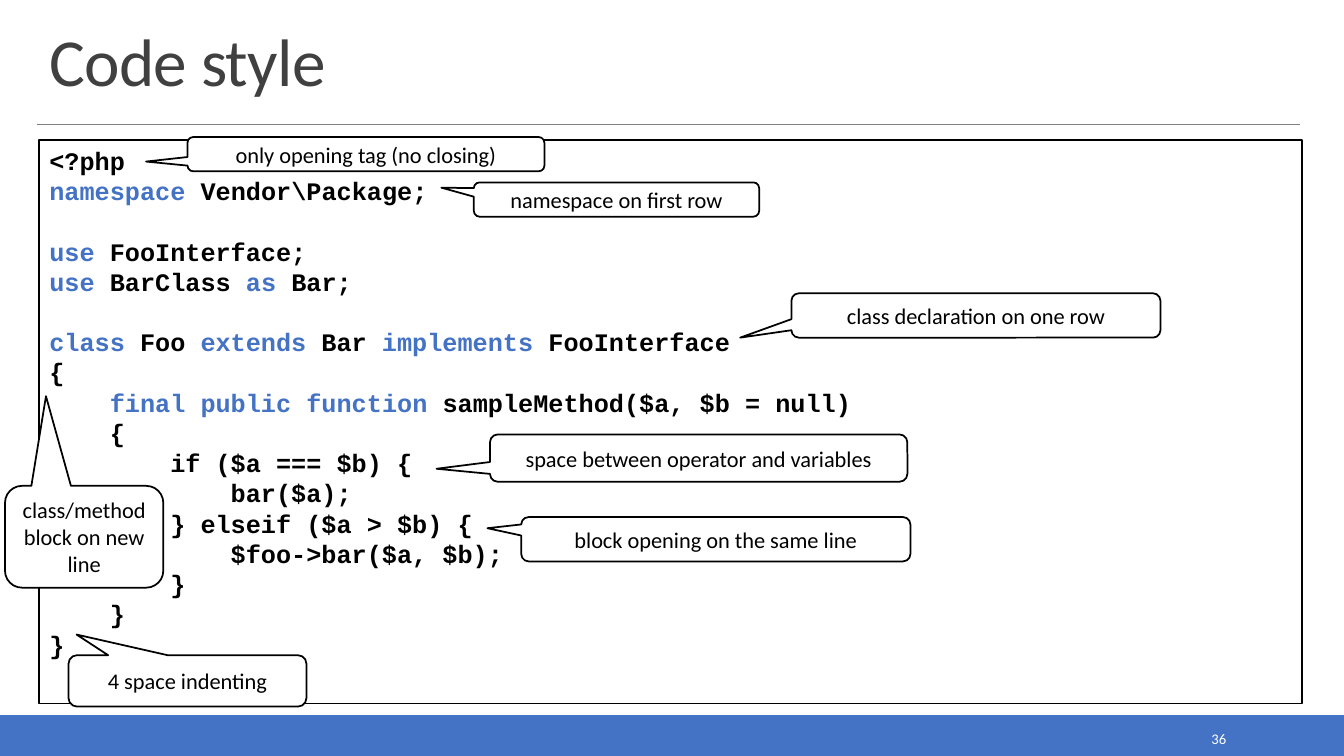
from pptx import Presentation
from pptx.dml.color import RGBColor
from pptx.enum.shapes import MSO_CONNECTOR, MSO_SHAPE
from pptx.enum.text import MSO_ANCHOR, PP_ALIGN
from pptx.oxml.ns import qn
from pptx.util import Pt
from lxml.etree import SubElement

PX = 9144
HUE = {"blue": "4472C4", "black": "000000", "white": "FFFFFF",
       "gray": "808080", "dark": "404040"}


def put(para, text, size, hue, face="Calibri", bold=False):
    run = para.add_run()
    run.text = text
    font = run.font
    font.size, font.name, font.bold = Pt(size), face, bold
    font.color.rgb = RGBColor.from_string(HUE[hue])
    return run


def draw(kind, box, fill, line):
    shape = slide.shapes.add_shape(kind, *[n * PX for n in box])
    shape.shadow.inherit = False
    if fill:
        shape.fill.solid()
        shape.fill.fore_color.rgb = RGBColor.from_string(HUE[fill])
    else:
        shape.fill.background()
    shape.line.color.rgb = RGBColor.from_string(HUE[line])
    shape.line.width = Pt(1.25)
    shape.text_frame.word_wrap = True
    return shape


deck = Presentation()
deck.slide_width, deck.slide_height = 1333 * PX, 750 * PX
slide = deck.slides.add_slide(deck.slide_layouts[5])

draw(MSO_SHAPE.RECTANGLE, (0, 710, 1333, 40), "blue", "blue")

rule = slide.shapes.add_connector(
    MSO_CONNECTOR.STRAIGHT, 37 * PX, 123 * PX, 1289 * PX, 123 * PX)
rule.line.color.rgb = RGBColor.from_string(HUE["gray"])
rule.line.width = Pt(0.5)
SubElement(rule._element.spPr, qn("a:effectLst"))

title = slide.shapes.title
title.left, title.top, title.width, title.height = [
    n * PX for n in (39, 20, 1252, 84)]
title.text_frame.vertical_anchor = MSO_ANCHOR.BOTTOM
para = title.text_frame.paragraphs[0]
para.alignment = PP_ALIGN.LEFT
para.line_spacing = 0.85
run = put(para, "Code style", 48, "dark")
run._r.get_or_add_rPr().set("spc", "-50")

page = slide.shapes.add_textbox(1083 * PX, 719 * PX, 143 * PX, 28 * PX)
page.text_frame.word_wrap = True
page.text_frame.vertical_anchor = MSO_ANCHOR.MIDDLE
para = page.text_frame.paragraphs[0]
para.alignment = PP_ALIGN.RIGHT
put(para, "36", 10.5, "white")

LEAD = 21.6
TAB = 60
CODE = [
    (0, 0, "<?php"),
    (0, 0, "|namespace| Vendor\\Package;"),
    (0, 1, "|use |FooInterface;"),
    (0, 0, "|use |BarClass |as| Bar;"),
    (0, 1, "|class| Foo |extends| Bar |implements |FooInterface"),
    (0, 0, "{"),
    (1, 0, "|final public function |sampleMethod($a, $b = null)"),
    (1, 0, "{"),
    (2, 0, "if ($a === $b) {"),
    (3, 0, "bar($a);"),
    (2, 0, "} elseif ($a > $b) {"),
    (3, 0, "$foo->bar($a, $b);"),
    (2, 0, "}"),
    (1, 0, "}"),
    (0, 0, "}"),
]
frame = draw(MSO_SHAPE.RECTANGLE, (39, 139, 1252, 559), None, "black").text_frame
frame.vertical_anchor = MSO_ANCHOR.TOP
for row, (depth, gap, text) in enumerate(CODE):
    para = frame.add_paragraph() if row else frame.paragraphs[0]
    para.alignment = PP_ALIGN.LEFT
    para.line_spacing = Pt(LEAD)
    para.space_before = Pt(LEAD * gap)
    para._p.get_or_add_pPr().set("marL", str(depth * TAB * PX))
    for part, word in enumerate(text.split("|")):
        if word:
            put(para, word, 18, "blue" if part % 2 else "black", "Courier New", True)

NOTES = [
    ("4 space indenting", (68, 650, 236, 51), (-0.466, -0.902)),
    ("space between operator and variables", (486, 431, 414, 47), (-0.628, 0.226)),
    ("class declaration on one row", (785, 291, 366, 44), (-0.639, 0.5)),
    ("namespace on first row", (470, 181, 283, 34), (-0.614, -0.345)),
    ("only opening tag (no closing)", (186, 136, 354, 34), (-0.616, 0.216)),
    ("block opening on the same line", (517, 513, 386, 44), (-0.587, -0.248)),
    ("class/method block on new line", (5, 482, 157, 101), (-0.241, -1.381)),
]
for text, box, tip in NOTES:
    note = draw(MSO_SHAPE.ROUNDED_RECTANGULAR_CALLOUT, box, "white", "black")
    note.adjustments[0], note.adjustments[1] = tip
    note.text_frame.vertical_anchor = MSO_ANCHOR.MIDDLE
    para = note.text_frame.paragraphs[0]
    para.alignment = PP_ALIGN.CENTER
    put(para, text, 16, "black")

deck.save("out.pptx")
